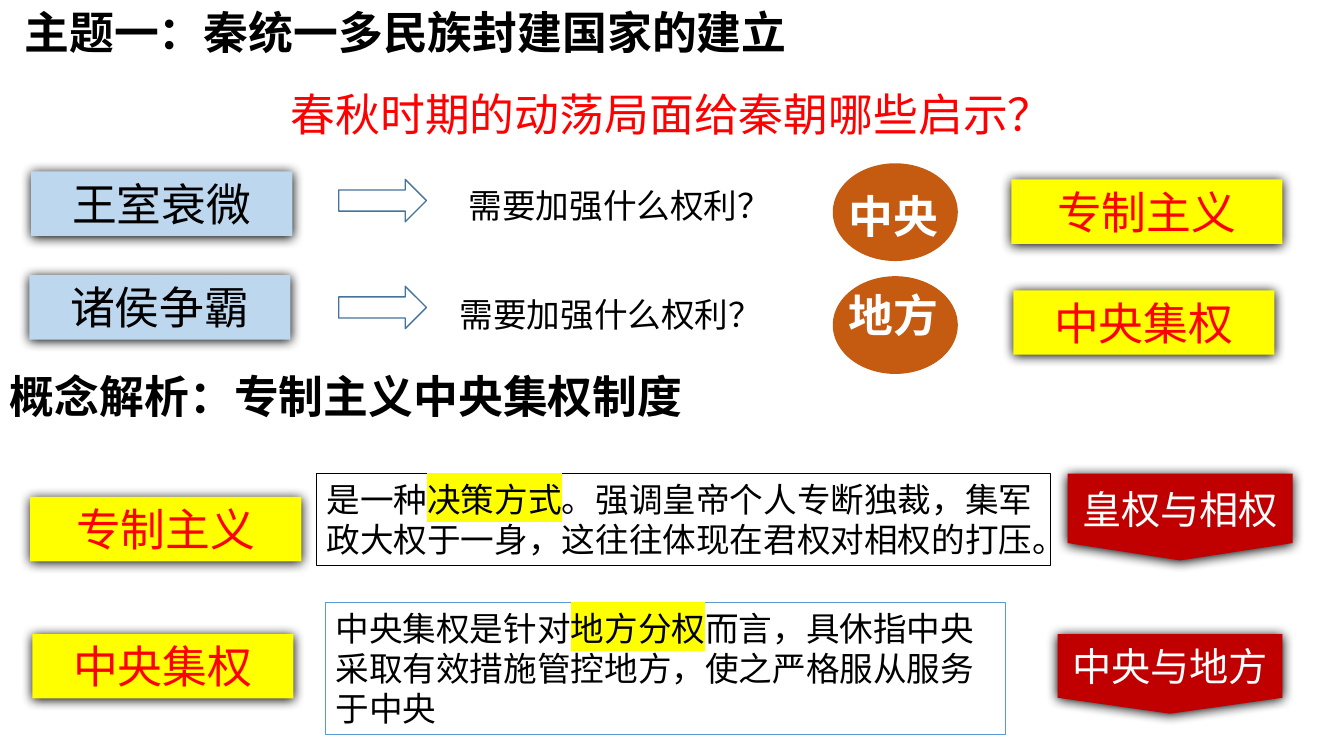
from dataclasses import dataclass
from typing import Optional

from lxml.etree import SubElement
from pptx import Presentation
from pptx.dml.color import RGBColor
from pptx.enum.shapes import MSO_SHAPE
from pptx.enum.text import MSO_ANCHOR, MSO_AUTO_SIZE, PP_ALIGN
from pptx.oxml.ns import qn
from pptx.util import Inches, Pt

BLACK = RGBColor(0x00, 0x00, 0x00)
WHITE = RGBColor(0xFF, 0xFF, 0xFF)
RED = RGBColor(0xFF, 0x00, 0x00)
DARK_RED = RGBColor(0xC0, 0x00, 0x00)
YELLOW = RGBColor(0xFF, 0xFF, 0x00)
PALE_BLUE = RGBColor(0xBD, 0xD7, 0xEE)
BLUE = RGBColor(0x5B, 0x9B, 0xD5)
ARROW_BLUE = RGBColor(0x43, 0x73, 0x9E)
ORANGE = RGBColor(0xC5, 0x5A, 0x11)

CJK_FONT = "Noto Sans CJK SC"
LINE_HEIGHT = 0.64


@dataclass
class Box:
    left: float
    top: float
    width: float
    height: float


@dataclass
class Label:
    text: str
    size: int
    color: RGBColor = BLACK
    bold: bool = False
    align: PP_ALIGN = PP_ALIGN.LEFT
    anchor: MSO_ANCHOR = MSO_ANCHOR.TOP
    highlight: str = ""


@dataclass
class Tag:
    text: str
    left: float
    top: float
    width: float
    fill: RGBColor
    color: RGBColor


@dataclass
class Power:
    """One row of the upper half: a question, an arrow and an oval."""
    name: str
    arrow_top: float
    question_left: float
    question_top: float
    oval_top: float
    name_top: float


@dataclass
class Definition:
    box: Box
    text: str
    highlight: str
    line: RGBColor


@dataclass
class Banner:
    text: str
    box: Box


TAGS = [
    Tag("王室衰微", 0.31, 1.70, 2.59, PALE_BLUE, BLACK),
    Tag("诸侯争霸", 0.29, 2.73, 2.59, PALE_BLUE, BLACK),
    Tag("专制主义", 10.03, 1.78, 2.69, YELLOW, RED),
    Tag("中央集权", 10.05, 2.88, 2.59, YELLOW, RED),
    Tag("专制主义", 0.30, 4.93, 2.69, YELLOW, RED),
    Tag("中央集权", 0.32, 6.29, 2.59, YELLOW, RED),
]
POWERS = [
    Power("中央", 1.78, 4.55, 1.79, 1.62, 1.82),
    Power("地方", 2.84, 4.46, 2.87, 2.74, 2.81),
]
DEFINITIONS = [
    Definition(Box(3.14, 4.70, 7.28, 0.91),
               "是一种决策方式。强调皇帝个人专断独裁，集军政大权于一身，这往往体现在君权对相权的打压。",
               "决策方式", BLACK),
    Definition(Box(3.23, 5.98, 6.74, 1.31),
               "中央集权是针对地方分权而言，具休指中央采取有效措施管控地方，使之严格服从服务于中央",
               "地方分权", BLUE),
]
BANNERS = [
    Banner("皇权与相权", Box(10.59, 4.70, 2.23, 0.86)),
    Banner("中央与地方", Box(10.49, 6.29, 2.23, 0.79)),
]


def write(shape, label: Label) -> None:
    frame = shape.text_frame
    frame.word_wrap = True
    frame.auto_size = MSO_AUTO_SIZE.NONE
    frame.vertical_anchor = label.anchor
    paragraph = frame.paragraphs[0]
    paragraph.alignment = label.align
    font = paragraph.font
    font.size, font.bold, font.name = Pt(label.size), label.bold, CJK_FONT
    font.color.rgb = label.color
    SubElement(font._element, qn("a:ea"), typeface=CJK_FONT)
    before, marked, after = label.text.partition(label.highlight or label.text)
    for text in filter(None, (before, marked, after)):
        run = paragraph.add_run()
        run.text = text
        if text == label.highlight:
            highlight = SubElement(run.font._element, qn("a:highlight"))
            SubElement(highlight, qn("a:srgbClr"), val=str(YELLOW))


def add_text(slide, box: Box, label: Label) -> None:
    shape = slide.shapes.add_textbox(Inches(box.left), Inches(box.top),
                                     Inches(box.width), Inches(box.height))
    write(shape, label)


def add_figure(slide, kind: MSO_SHAPE, box: Box, fill: Optional[RGBColor] = None,
               line: Optional[RGBColor] = None, line_width: float = 0.75):
    shape = slide.shapes.add_shape(kind, Inches(box.left), Inches(box.top),
                                   Inches(box.width), Inches(box.height))
    shape.shadow.inherit = False
    if fill is None:
        shape.fill.background()
    else:
        shape.fill.solid()
        shape.fill.fore_color.rgb = fill
    if line is None:
        shape.line.fill.background()
    else:
        shape.line.color.rgb = line
        shape.line.width = Pt(line_width)
    return shape


def cast_shadow(shape) -> None:
    effects = shape._element.spPr.find(qn("a:effectLst"))
    shadow = SubElement(effects, qn("a:outerShdw"), blurRad=str(Pt(8.5)),
                        dist=str(Pt(1)), dir="5400000", algn="t", rotWithShape="0")
    SubElement(shadow, qn("a:srgbClr"), val=str(BLACK))


def add_tag(slide, tag: Tag) -> None:
    box = Box(tag.left, tag.top, tag.width, LINE_HEIGHT)
    shape = add_figure(slide, MSO_SHAPE.RECTANGLE, box, tag.fill)
    cast_shadow(shape)
    write(shape, Label(tag.text, 32, tag.color, align=PP_ALIGN.CENTER))


def add_power(slide, power: Power) -> None:
    add_figure(slide, MSO_SHAPE.RIGHT_ARROW, Box(3.36, power.arrow_top, 0.87, 0.42),
               line=ARROW_BLUE, line_width=1)
    add_text(slide, Box(power.question_left, power.question_top, 2.98, 0.5),
             Label("需要加强什么权利？", 24))
    add_figure(slide, MSO_SHAPE.OVAL, Box(8.26, power.oval_top, 1.24, 0.97), ORANGE)
    add_text(slide, Box(8.32, power.name_top, 1.12, LINE_HEIGHT),
             Label(power.name, 32, WHITE, bold=True))


def add_definition(slide, definition: Definition) -> None:
    shape = add_figure(slide, MSO_SHAPE.RECTANGLE, definition.box, line=definition.line)
    write(shape, Label(definition.text, 24, highlight=definition.highlight))


def add_banner(slide, banner: Banner) -> None:
    shape = add_figure(slide, MSO_SHAPE.FLOWCHART_OFFPAGE_CONNECTOR, banner.box, DARK_RED)
    cast_shadow(shape)
    write(shape, Label(banner.text, 28, WHITE, align=PP_ALIGN.CENTER,
                       anchor=MSO_ANCHOR.MIDDLE))


def main() -> None:
    presentation = Presentation()
    presentation.slide_width, presentation.slide_height = Inches(13.33), Inches(7.5)
    slide = presentation.slides.add_slide(presentation.slide_layouts[6])

    title = add_figure(slide, MSO_SHAPE.RECTANGLE, Box(0.12, 0, 7.81, LINE_HEIGHT), WHITE)
    write(title, Label("主题一：秦统一多民族封建国家的建立", 32, bold=True, align=PP_ALIGN.CENTER))
    add_text(slide, Box(0.39, 0.81, 12.55, LINE_HEIGHT),
             Label("春秋时期的动荡局面给秦朝哪些启示？", 32, RED, align=PP_ALIGN.CENTER))
    add_text(slide, Box(0, 3.61, 7.15, 0.96),
             Label("概念解析：专制主义中央集权制度", 32, bold=True))
    for tag in TAGS:
        add_tag(slide, tag)
    for power in POWERS:
        add_power(slide, power)
    for definition in DEFINITIONS:
        add_definition(slide, definition)
    for banner in BANNERS:
        add_banner(slide, banner)

    presentation.save("out.pptx")


if __name__ == "__main__":
    main()
